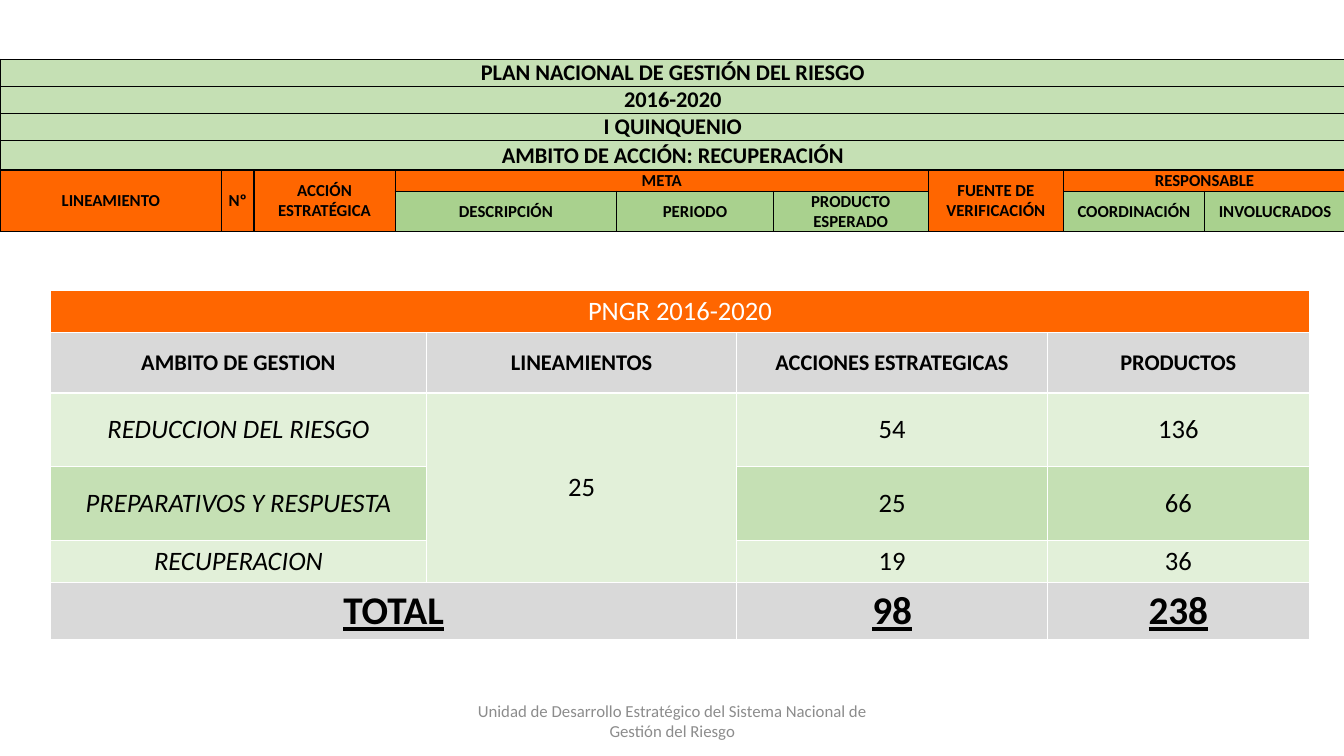
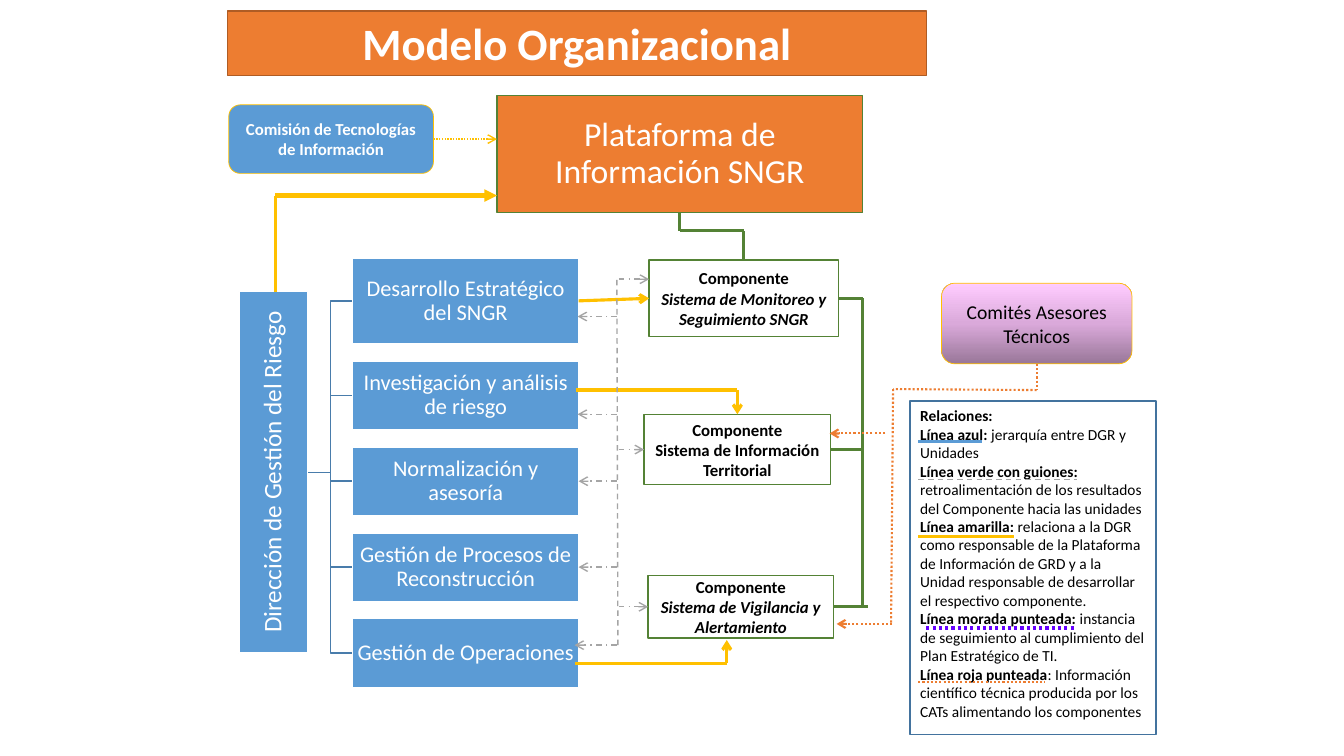
from copy import deepcopy
from dataclasses import dataclass

from lxml.etree import SubElement
from pptx import Presentation
from pptx.dml.color import RGBColor
from pptx.enum.dml import MSO_LINE
from pptx.enum.shapes import MSO_CONNECTOR, MSO_SHAPE
from pptx.enum.text import MSO_ANCHOR, PP_ALIGN
from pptx.oxml.ns import qn
from pptx.util import Inches, Pt

FONT = "Calibri"
COLOURS = {
    "black": "000000", "white": "FFFFFF", "footer": "8C8C8C", "head": "FF6600",
    "pale": "E2F0D9", "light": "C5E0B4", "leaf": "A9D18E", "silver": "D9D9D9",
    "blue": "5B9BD5", "bracket": "497CAB", "navy": "43739E", "orange": "ED7D31",
    "rust": "AF5C24", "green": "548235", "yellow": "FFC000", "grey": "A5A5A5",
    "purple": "6600FF", "plum": "997799", "mauve": "DAA9DA", "pink": "FFCCFF",
}
# Colour, width and dash of each kind of relation
LINES = {
    "structure": ("green", 2.25, None),
    "owner": ("yellow", 2.25, None),
    "lead": ("yellow", 3, None),
    "commission": ("yellow", 1, MSO_LINE.ROUND_DOT),
    "feedback": ("grey", 1, MSO_LINE.DASH_DOT),
    "trunk": ("grey", 1, MSO_LINE.DASH),
    "advice": ("orange", 1.5, MSO_LINE.ROUND_DOT),
    "hierarchy": ("blue", 2.25, None),
    "tracking": ("purple", 2.25, MSO_LINE.ROUND_DOT),
}


def grid(count):
    """Length of a number of grid columns or rows, ten to the inch."""
    return Inches(count / 10)


def rgb(name):
    return RGBColor.from_string(COLOURS[name])


@dataclass
class Box:
    left: float
    top: float
    width: float
    height: float

    def at(self, left, top, width, height):
        return Box(self.left + left, self.top + top, width, height)

    def point(self, x, y):
        return self.left + x, self.top + y

    def lengths(self):
        return [grid(n) for n in (self.left, self.top, self.width, self.height)]


SLIDE = Box(0, 0, 133.33, 75)


def write(frame, *paras, size=12, color="black", bold=False, italic=False,
          underline=False, align=PP_ALIGN.CENTER, spacing=None):
    """Fill a frame; a paragraph is a string or a list of (text, changes)."""
    frame.word_wrap = True
    for index, spans in enumerate(paras):
        para = frame.add_paragraph() if index else frame.paragraphs[0]
        para.alignment = align
        if spacing:
            para.line_spacing = spacing
        for text, changes in [(spans, {})] if isinstance(spans, str) else spans:
            span = para.add_run()
            span.text = text
            font = span.font
            font.name, font.size, font.color.rgb = FONT, Pt(size), rgb(color)
            font.bold = changes.get("bold", bold)
            font.italic = changes.get("italic", italic)
            font.underline = underline


def block(page, box, *paras, fill="blue", line="white", width=1,
          kind=MSO_SHAPE.RECTANGLE, anchor=MSO_ANCHOR.MIDDLE, margin=None, **style):
    shape = page.shapes.add_shape(kind, *box.lengths())
    shape.shadow.inherit = False
    shape.fill.solid()
    shape.fill.fore_color.rgb = rgb(fill)
    shape.line.color.rgb = rgb(line)
    shape.line.width = Pt(width)
    frame = shape.text_frame
    frame.vertical_anchor = anchor
    if margin is not None:
        frame.margin_left = frame.margin_right = grid(margin)
        frame.margin_top = frame.margin_bottom = grid(margin)
    write(frame, *paras, **style)
    return shape


def place(stop):
    """Coordinates of a (shape, side) stop or of a (column, row) point."""
    first, second = stop
    if isinstance(first, (int, float)):
        return grid(first), grid(second)
    x, y = ((1, 0), (0, 1), (1, 2), (2, 1))[second]
    return first.left + first.width * x // 2, first.top + first.height * y // 2


def route(page, kind, *stops, arrow=None):
    """Straight connectors through the stops, with an arrowhead at the last."""
    color, width, dash = LINES[kind]
    for start, end in zip(stops, stops[1:]):
        link = page.shapes.add_connector(
            MSO_CONNECTOR.STRAIGHT, *place(start), *place(end))
        link.line.color.rgb = rgb(color)
        link.line.width = Pt(width)
        if dash:
            link.line.dash_style = dash
        if not isinstance(start[0], (int, float)):
            link.begin_connect(*start)
        if not isinstance(end[0], (int, float)):
            link.end_connect(*end)
        properties = link._element.spPr
        if arrow and end is stops[-1]:
            SubElement(properties.find(qn("a:ln")), qn("a:tailEnd"), type=arrow)
        SubElement(properties, qn("a:effectLst"))


# Tables
def add_grid(page, box, columns, rows, cells, border, margins):
    """Cells are (row, column, row span, column span, text, fill, style)."""
    table = page.shapes.add_table(len(rows), len(columns), *box.lengths()).table
    for column, width in zip(table.columns, columns):
        column.width = grid(width)
    for row, height in zip(table.rows, rows):
        row.height = grid(height)
    for top, left, down, across, text, fill, style in cells:
        for r in range(top, top + down):
            for c in range(left, left + across):
                paint(table.cell(r, c), fill, border)
        cell = table.cell(top, left)
        if down * across > 1:
            cell.merge(table.cell(top + down - 1, left + across - 1))
        cell.margin_left = cell.margin_right = grid(margins[0])
        cell.margin_top = cell.margin_bottom = grid(margins[1])
        cell.vertical_anchor = MSO_ANCHOR.MIDDLE
        write(cell.text_frame, text, **style)


def paint(cell, fill, border):
    properties = cell._tc.get_or_add_tcPr()
    for side in ("L", "R", "T", "B"):
        edge = SubElement(properties, qn(f"a:ln{side}"), w=str(Pt(1)))
        SubElement(SubElement(edge, qn("a:solidFill")), qn("a:srgbClr"),
                   val=COLOURS[border])
    cell.fill.solid()
    cell.fill.fore_color.rgb = rgb(fill)


def plan_header(page, box):
    large, small = dict(size=16, bold=True), dict(size=12, bold=True)
    titles = ("PLAN NACIONAL DE GESTIÓN DEL RIESGO", "2016-2020", "I QUINQUENIO",
              "AMBITO DE ACCIÓN: RECUPERACIÓN")
    cells = [(row, 0, 1, 9, text, "light", large) for row, text in enumerate(titles)]
    heads = ((0, 2, 1, "LINEAMIENTO"), (1, 2, 1, "Nº"), (2, 2, 1, "ACCIÓN ESTRATÉGICA"),
             (3, 1, 3, "META"), (6, 2, 1, "FUENTE DE VERIFICACIÓN"),
             (7, 1, 2, "RESPONSABLE"))
    cells += [(4, column, down, across, text, "head", small)
              for column, down, across, text in heads]
    details = {3: "DESCRIPCIÓN", 4: "PERIODO", 5: "PRODUCTO ESPERADO",
               7: "COORDINACIÓN", 8: "INVOLUCRADOS"}
    cells += [(5, column, 1, 1, text, "leaf", small) for column, text in details.items()]
    add_grid(page, box, (22, 3.2, 14, 22, 15.5, 15.4, 13.4, 14, 14),
             (2.5, 2.7, 2.7, 2.9, 2.1, 4), cells, "black", (0, 0))


def plan_totals(page, box):
    body, total = dict(size=19), dict(size=28, bold=True, underline=True)
    cells = [(0, 0, 1, 4, "PNGR 2016-2020", "head", dict(size=19, color="white")),
             (2, 1, 3, 1, "25", "pale", body)]
    heads = ("AMBITO DE GESTION", "LINEAMIENTOS", "ACCIONES ESTRATEGICAS", "PRODUCTOS")
    cells += [(1, column, 1, 1, text, "silver", dict(size=16, bold=True))
              for column, text in enumerate(heads)]
    scopes = (("REDUCCION DEL RIESGO", "54", "136"),
              ("PREPARATIVOS Y RESPUESTA", "25", "66"), ("RECUPERACION", "19", "36"))
    for row, (scope, actions, products) in enumerate(scopes, 2):
        fill = "light" if row % 2 else "pale"
        cells += [(row, 0, 1, 1, scope, fill, dict(size=19, italic=True)),
                  (row, 2, 1, 1, actions, fill, body),
                  (row, 3, 1, 1, products, fill, body)]
    cells += [(5, column, 1, across, text, "silver", total)
              for column, across, text in ((0, 2, "TOTAL"), (2, 1, "98"), (3, 1, "238"))]
    add_grid(page, box, (37.3, 30.8, 30.8, 26), (4.2, 6, 7.3, 7.3, 4.2, 5.7),
             cells, "white", (1.3, 0.5))


def footer(page, box):
    frame = page.shapes.add_textbox(*box.lengths()).text_frame
    frame.vertical_anchor = MSO_ANCHOR.MIDDLE
    write(frame, "Unidad de Desarrollo Estratégico del Sistema Nacional de "
          "Gestión del Riesgo", color="footer")


# Organisation chart
def unit_tree(page, box):
    """Brackets, the direction on its side and its five units."""
    names = ("Desarrollo Estratégico del SNGR", "Investigación y análisis de riesgo",
             "Normalización y asesoría", "Gestión de Procesos de Reconstrucción",
             "Gestión de Operaciones")
    root = box.at(0, 3.3, 6.8, 35.9)
    middle = root.height / 2 + 3.3
    places, top = [], 0
    for index in range(len(names)):
        height = 6.8 if index else 8.5
        places.append(box.at(11.3, top, 22.4, height))
        top += height + 1.72
    for spot in places:
        end = spot.top + spot.height / 2
        points = [box.point(6.8, middle), box.point(9.1, middle),
                  (box.left + 9.1, end), (spot.left, end)]
        start, *rest = [(grid(x), grid(y)) for x, y in points]
        builder = page.shapes.build_freeform(*start)
        builder.add_line_segments(rest, close=False)
        bracket = builder.convert_to_shape()
        bracket.shadow.inherit = False
        bracket.fill.background()
        bracket.line.color.rgb = rgb("bracket")
        bracket.line.width = Pt(1)
    style = dict(color="white", margin=0.1, spacing=0.9)
    shift = (root.height - root.width) / 2
    lying = root.at(-shift, shift, root.height, root.width)
    block(page, lying, "Dirección de Gestión del Riesgo", size=18, **style).rotation = 270
    return [block(page, spot, name, size=16, **style)
            for spot, name in zip(places, names)]


def components(page, box):
    parts = ((0.5, 0, 18.8, 7.6, "Sistema de Monitoreo y Seguimiento SNGR", True),
             (0, 15.3, 18.5, 7, "Sistema de Información Territorial", False),
             (0.4, 31.3, 18.4, 6.2, "Sistema de Vigilancia y Alertamiento", True))
    return [block(page, box.at(*spot), "Componente", [(name, dict(italic=slanted))],
                  fill="white", line="green", margin=0.1, bold=True)
            for *spot, name, slanted in parts]


def committees(page, box):
    shape = block(page, box, "Comités Asesores Técnicos", size=14, line="yellow",
                  width=0.5, kind=MSO_SHAPE.ROUNDED_RECTANGLE)
    shape.fill.gradient()
    shape.fill.gradient_angle = 90
    stops = shape._element.spPr.find(".//" + qn("a:gsLst"))
    stops.insert(1, deepcopy(stops[0]))
    for index, name in enumerate(("plum", "mauve", "pink")):
        stop = shape.fill.gradient_stops[index]
        stop.position, stop.color.rgb = index / 2, rgb(name)
    return shape


def legend(page, box):
    entries = (
        ("Relaciones:", ""),
        ("Línea azul: ", "jerarquía entre DGR y Unidades"),
        ("Línea verde con guiones: ",
         "retroalimentación de los resultados del Componente hacia las unidades"),
        ("Línea amarilla: ", "relaciona a la DGR como responsable de la Plataforma de "
         "Información de GRD y a la Unidad responsable de desarrollar el respectivo "
         "componente."),
        ("Línea morada punteada: ",
         "instancia de seguimiento al cumplimiento del Plan Estratégico de TI."),
        ("Línea roja punteada", ": Información científico técnica producida por los "
         "CATs alimentando los componentes"))
    paras = [[(term, dict(bold=True))] + ([(meaning, {})] if meaning else [])
             for term, meaning in entries]
    block(page, box, *paras, size=11, fill="white", line="navy",
          anchor=MSO_ANCHOR.TOP, align=PP_ALIGN.LEFT)
    # A sample of each line under its name
    for kind, left, right, y in (
            ("hierarchy", 0.8, 7.1, 4), ("trunk", 0.8, 16.5, 7.8),
            ("owner", 0.8, 10.3, 13.4), ("tracking", 1.6, 16.2, 22.5),
            ("advice", 0.8, 13.4, 27.9)):
        route(page, kind, box.point(left, y), box.point(right, y))


def relations(page, box, units, parts, platform, commission, advisers):
    at = box.point
    monitoring, territorial, alerts = parts
    # Platform and its components
    route(page, "structure", (monitoring, 0), at(73.8, 22.9), at(67.45, 22.9), (platform, 2))
    route(page, "structure", (monitoring, 3), at(85.6, 29.6), at(85.6, 60.2))
    route(page, "structure", (territorial, 3), at(85.6, 44.6))
    route(page, "structure", (alerts, 3), at(86.1, 60.2))
    # Responsible units
    route(page, "commission", (commission, 3), at(49.3, 13.8), arrow="arrow")
    route(page, "owner", at(27.3, 29), at(27.3, 19.4))
    route(page, "lead", at(27.3, 19.4), at(49.3, 19.4), arrow="triangle")
    route(page, "owner", (units[0], 3), (monitoring, 1), arrow="arrow")
    route(page, "owner", at(57.1, 38.7), at(73.15, 38.7), (territorial, 0), arrow="arrow")
    route(page, "owner", at(57, 65.8), at(72.1, 65.8), at(72.1, 63.5), arrow="arrow")
    # Feedback to the units
    route(page, "trunk", at(61.3, 64), at(61.2, 27.7))
    for end in (at(57.3, 31.4), at(57.3, 41.1), (units[2], 3), (units[3], 3), at(57, 64)):
        y = place(end)[1] / grid(10) * 10
        route(page, "feedback", (61.2, y), end, arrow="arrow")
    for end in (at(64.4, 27.7), (territorial, 1), (alerts, 1)):
        y = place(end)[1] / grid(10) * 10
        route(page, "feedback", (61.4, y), end, arrow="arrow")
    # Technical advice
    route(page, "advice", (advisers, 2), at(102.85, 38.7), at(88.6, 38.6), at(88.4, 61.8))
    route(page, "advice", at(87.8, 43), at(82.3, 43), arrow="arrow")
    route(page, "advice", at(88.5, 61.9), at(83, 61.9), arrow="arrow")


def plan_slide(page, box):
    footer(page, box.at(44.2, 69.5, 45, 4))
    plan_header(page, box.at(0, 5.9, box.width, 17))
    plan_totals(page, box.at(5, 28.8, 124.9, 34.7))


def model_slide(page, box):
    units = unit_tree(page, box.at(23.7, 25.6, 33.7, 42.6))
    platform = block(page, box.at(49.3, 9.5, 36.3, 11.6), "Plataforma de Información SNGR",
                     fill="orange", line="green", size=24, color="white", margin=0.1,
                     spacing=0.9)
    parts = components(page, box.at(63.9, 25.8, 19.3, 37.5))
    commission = block(page, box.at(22.7, 10.4, 20.3, 6.8),
                       "Comisión de Tecnologías de Información", line="yellow", width=0.5,
                       kind=MSO_SHAPE.ROUNDED_RECTANGLE, color="white", bold=True)
    block(page, box.at(22.6, 1.1, 69.3, 6.4), "Modelo Organizacional", fill="orange",
          line="rust", size=32, color="white", bold=True, anchor=MSO_ANCHOR.TOP)
    legend(page, box.at(90.3, 39.8, 24.4, 33.1))
    advisers = committees(page, box.at(93.4, 28.1, 18.9, 8))
    relations(page, box, units, parts, platform, commission, advisers)


def main():
    deck = Presentation()
    deck.slide_width, deck.slide_height = grid(SLIDE.width), grid(SLIDE.height)
    for fill_slide in (plan_slide, model_slide):
        fill_slide(deck.slides.add_slide(deck.slide_layouts[6]), SLIDE)
    deck.save("out.pptx")


if __name__ == "__main__":
    main()
